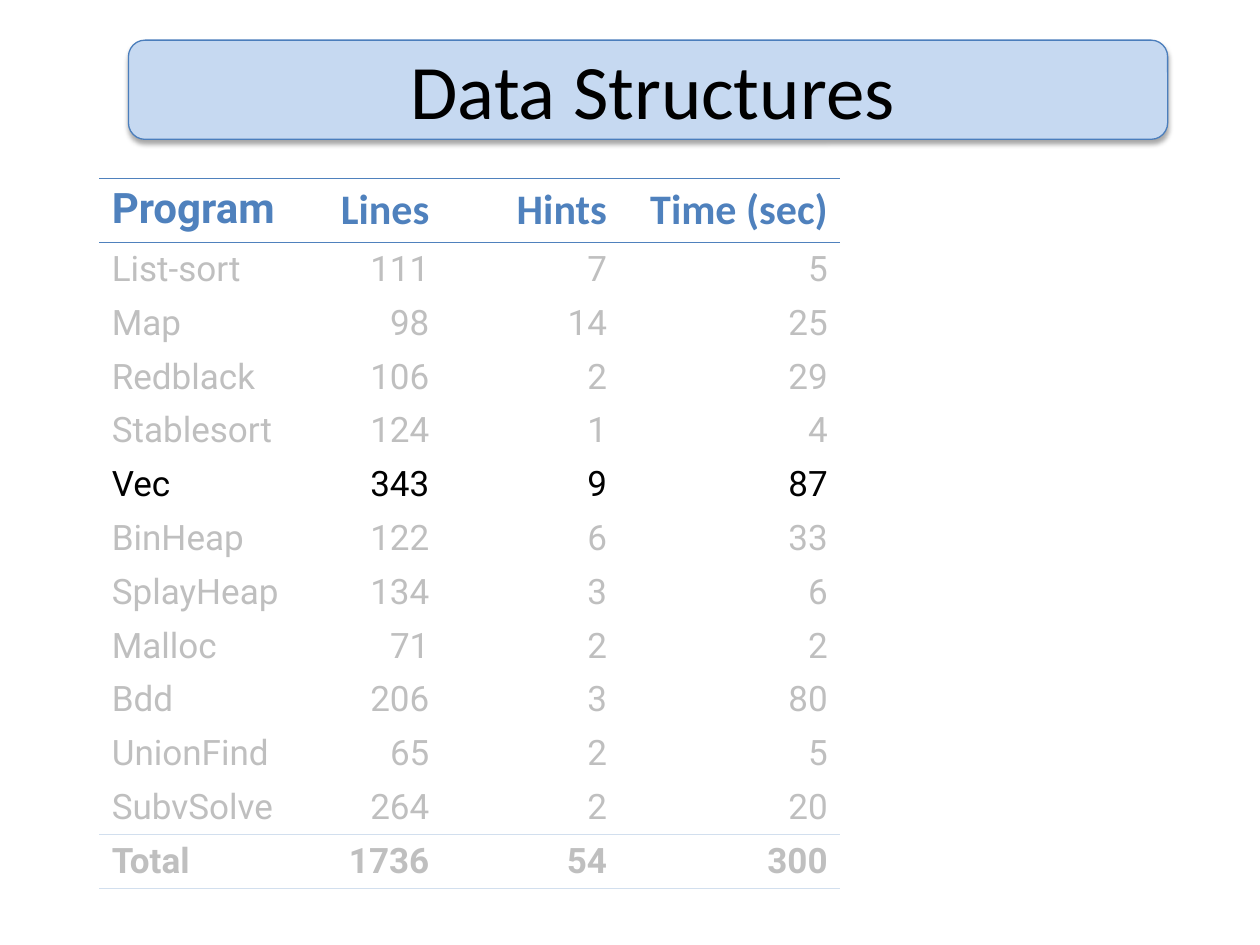
"""Build the Data Structures slide: a titled table with all rows but one faded."""
from dataclasses import dataclass

from lxml import etree
from pptx import Presentation
from pptx.dml import color
from pptx.enum import shapes, text
from pptx.oxml import ns
from pptx.util import Cm, Pt

ACCENT = "4F81BD"
BLACK = "000000"
WHITE = "FFFFFF"
PLAIN_TABLE_STYLE = "{2D5ABB26-0587-4C30-8999-92F81FD0307C}"
COLUMN_WIDTHS = (4.57, 2.34, 0.84, 2.74, 4.45)
HEADER_HEIGHT, ROW_HEIGHT = 1.29, 1.02


@dataclass(frozen=True)
class Panel:
    """A filled, outlined box measured in centimetres."""
    left: float
    top: float
    width: float
    height: float
    fill: str
    line: str
    line_width: float
    kind: int = shapes.MSO_SHAPE.RECTANGLE


@dataclass(frozen=True)
class Program:
    """One line of the results table."""
    name: str
    lines: int
    hints: int
    seconds: int


TITLE_BAND = Panel(2.59, 0.81, 20.95, 2.0, "C6D9F1", "4B7EBC", 0.75,
                   shapes.MSO_SHAPE.ROUNDED_RECTANGLE)
VEILS = (
    Panel(1.48, 4.95, 22.65, 4.14, WHITE, WHITE, 2),
    Panel(0.85, 10.37, 22.65, 8.05, WHITE, WHITE, 2),
)
PROGRAMS = (
    Program("List-sort", 111, 7, 5),
    Program("Map", 98, 14, 25),
    Program("Redblack", 106, 2, 29),
    Program("Stablesort", 124, 1, 4),
    Program("Vec", 343, 9, 87),
    Program("BinHeap", 122, 6, 33),
    Program("SplayHeap", 134, 3, 6),
    Program("Malloc", 71, 2, 2),
    Program("Bdd", 206, 3, 80),
    Program("UnionFind", 65, 2, 5),
    Program("SubvSolve", 264, 2, 20),
    Program("Total", 1736, 54, 300),
)


def rgb(value: str) -> color.RGBColor:
    """Turn a hex string into a colour."""
    return color.RGBColor.from_string(value)


def add_child(parent, tag: str, **attributes: str):
    """Append a DrawingML element and return it."""
    return etree.SubElement(parent, ns.qn(tag), attributes)


def style_font(font, name: str, size: float, hue: str, bold: bool = False) -> None:
    """Set the typeface, size, colour and weight of a font."""
    font.name, font.size, font.bold = name, Pt(size), bold
    font.color.rgb = rgb(hue)


def draw_panel(slide, panel: Panel):
    """Draw a panel without a shadow."""
    box = slide.shapes.add_shape(panel.kind, Cm(panel.left), Cm(panel.top),
                                 Cm(panel.width), Cm(panel.height))
    box.shadow.inherit = False
    box.fill.solid()
    box.fill.fore_color.rgb = rgb(panel.fill)
    box.line.color.rgb = rgb(panel.line)
    box.line.width = Pt(panel.line_width)
    return box


def draw_title(slide) -> None:
    """Draw the shadowed band and lay the title over it."""
    band = draw_panel(slide, TITLE_BAND)
    effects = band._element.spPr.find(ns.qn("a:effectLst"))
    shadow = add_child(effects, "a:outerShdw", blurRad=str(Pt(3.1)),
                       dist=str(Pt(1.8)), dir="5400000", rotWithShape="0")
    add_child(add_child(shadow, "a:srgbClr", val=BLACK), "a:alpha", val="35000")
    title = slide.shapes.title
    title.left, title.top, title.width, title.height = Cm(1.73), Cm(0.2), Cm(22.86), Cm(3.18)
    title.text_frame.text = "Data Structures"
    title.text_frame.vertical_anchor = text.MSO_ANCHOR.MIDDLE
    heading = title.text_frame.paragraphs[0]
    heading.alignment = text.PP_ALIGN.CENTER
    style_font(heading.font, "Calibri", 44, BLACK)
    slide.shapes._spTree.append(title._element)


def rule_cell(cell) -> None:
    """Rule a cell above and below."""
    properties = cell._tc.get_or_add_tcPr()
    for position, side in enumerate(("a:lnT", "a:lnB")):
        edge = etree.Element(ns.qn(side), {"w": str(Pt(1))})
        add_child(add_child(edge, "a:solidFill"), "a:srgbClr", val=ACCENT)
        properties.insert(position, edge)


def draw_table(slide) -> None:
    """Draw the program table with its ruled header and total."""
    rows = [("Program", "Lines", "", "Hints", "Time (sec)")]
    rows += [(p.name, p.lines, "", p.hints, p.seconds) for p in PROGRAMS]
    last = len(rows) - 1
    heights = [HEADER_HEIGHT] + [ROW_HEIGHT] * last
    table = slide.shapes.add_table(len(rows), len(COLUMN_WIDTHS), Cm(2.0), Cm(3.6),
                                   Cm(sum(COLUMN_WIDTHS)), Cm(sum(heights))).table
    table.first_row = table.horz_banding = False
    table._tbl.tblPr.find(ns.qn("a:tableStyleId")).text = PLAIN_TABLE_STYLE
    for column, width in zip(table.columns, COLUMN_WIDTHS):
        column.width = Cm(width)
    for r, (values, height) in enumerate(zip(rows, heights)):
        table.rows[r].height = Cm(height)
        for c, value in enumerate(values):
            cell = table.cell(r, c)
            cell.fill.background()
            cell.text = str(value)
            entry = cell.text_frame.paragraphs[0]
            entry.alignment = text.PP_ALIGN.RIGHT if c else text.PP_ALIGN.LEFT
            if r == 0:
                style_font(entry.font, "Calibri" if c else "Roboto", 24, ACCENT, True)
            else:
                style_font(entry.font, "Roboto", 20, BLACK, r == last)
            if r in (0, last):
                rule_cell(cell)


def draw_veil(slide, panel: Panel) -> None:
    """Fade the rows under a translucent panel."""
    veil = draw_panel(slide, panel)
    tint = veil._element.spPr.find(ns.qn("a:solidFill")).find(ns.qn("a:srgbClr"))
    add_child(tint, "a:alpha", val="75000")


def main() -> None:
    """Build and save the slide."""
    deck = Presentation()
    deck.slide_width, deck.slide_height = Cm(25.4), Cm(19.05)
    slide = deck.slides.add_slide(deck.slide_layouts[5])
    draw_title(slide)
    draw_table(slide)
    for veil in VEILS:
        draw_veil(slide, veil)
    deck.save("out.pptx")


if __name__ == "__main__":
    main()
